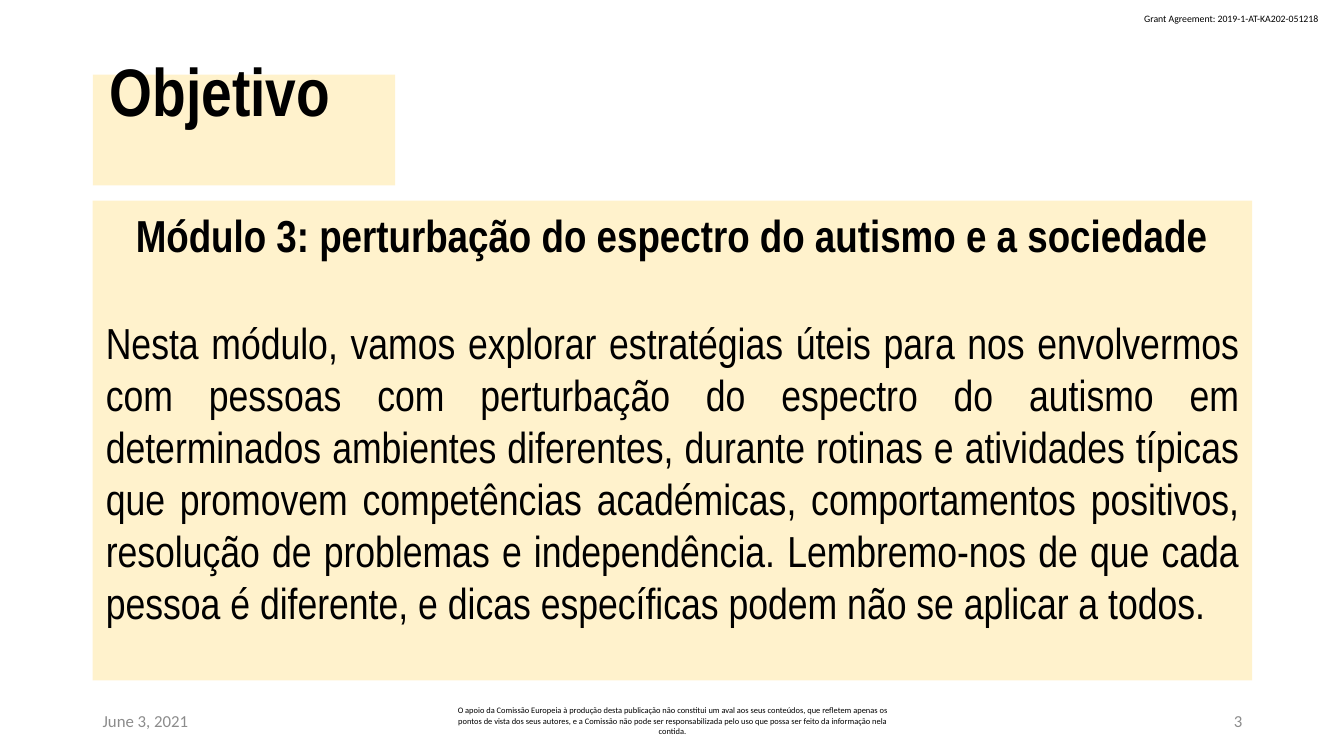
from pptx import Presentation
from pptx.dml.color import RGBColor
from pptx.enum.shapes import MSO_SHAPE
from pptx.enum.text import MSO_ANCHOR, MSO_AUTO_SIZE, PP_ALIGN
from pptx.util import Inches, Pt

COLORS = {"cream": "FFF2CC", "black": "000000", "gray": "8C8C8C"}
HEADING_FONT, SMALL_FONT = "Arial Narrow", "Calibri"
MARGIN = 0.92

GRANT = "Grant Agreement: 2019-1-AT-KA202-051218"
MODULE = "Módulo 3: perturbação do espectro do autismo e a sociedade"
GOAL = (
    "Nesta módulo, vamos explorar estratégias úteis para nos envolvermos com "
    "pessoas com perturbação do espectro do autismo em determinados ambientes "
    "diferentes, durante rotinas e atividades típicas que promovem competências "
    "académicas, comportamentos positivos, resolução de problemas e "
    "independência. Lembremo-nos de que cada pessoa é diferente, e dicas "
    "específicas podem não se aplicar a todos."
)
DISCLAIMER = (
    "O apoio da Comissão Europeia à produção desta publicação não constitui um "
    "aval aos seus conteúdos, que refletem apenas os pontos de vista dos seus "
    "autores, e a Comissão não pode ser responsabilizada pelo uso que possa ser "
    "feito da informação nela contida."
)


def rgb(name):
    return RGBColor.from_string(COLORS[name])


def fill_cream(sp):
    sp.fill.solid()
    sp.fill.fore_color.rgb = rgb("cream")
    sp.line.fill.background()


def set_frame(tf, anchor, left, top, right, bottom):
    tf.word_wrap = True
    tf.auto_size = MSO_AUTO_SIZE.NONE
    tf.vertical_anchor = anchor
    tf.margin_left, tf.margin_top = Inches(left), Inches(top)
    tf.margin_right, tf.margin_bottom = Inches(right), Inches(bottom)


def write(p, text, size, font, color="black", bold=False, align=PP_ALIGN.LEFT):
    p.alignment = align
    p.line_spacing = 1.0
    r = p.add_run()
    r.text = text
    r.font.size = Pt(size)
    r.font.name = font
    r.font.bold = bold
    r.font.color.rgb = rgb(color)


def add_title(s, text):
    sp = s.shapes.title
    sp.left, sp.top = Inches(MARGIN), Inches(0.74)
    sp.width, sp.height = Inches(3), Inches(1.1)
    fill_cream(sp)
    # The deep bottom inset lifts the word to the upper edge of its panel
    set_frame(sp.text_frame, MSO_ANCHOR.MIDDLE, 0.17, 0, 0.13, 0.8)
    write(sp.text_frame.paragraphs[0], text, 48, HEADING_FONT, bold=True)


def add_goal_panel(s):
    sp = s.shapes.add_shape(MSO_SHAPE.RECTANGLE, Inches(MARGIN), Inches(1.99),
                            Inches(11.5), Inches(4.76))
    sp.shadow.inherit = False
    fill_cream(sp)
    tf = sp.text_frame
    set_frame(tf, MSO_ANCHOR.TOP, 0.13, 0.07, 0.13, 0.07)
    write(tf.paragraphs[0], MODULE, 32, HEADING_FONT, bold=True,
          align=PP_ALIGN.CENTER)
    p = tf.add_paragraph()
    p.space_before = Pt(39)
    write(p, GOAL, 31, HEADING_FONT, align=PP_ALIGN.JUSTIFY)


def add_small_text(s, text, left, top, width, height, size, color="black",
                   align=PP_ALIGN.LEFT, anchor=MSO_ANCHOR.MIDDLE):
    sp = s.shapes.add_textbox(Inches(left), Inches(top), Inches(width),
                              Inches(height))
    set_frame(sp.text_frame, anchor, 0.1, 0.05, 0.1, 0.05)
    write(sp.text_frame.paragraphs[0], text, size, SMALL_FONT, color,
          align=align)
    return sp


def main():
    prs = Presentation()
    prs.slide_width, prs.slide_height = Inches(13.33), Inches(7.5)
    s = prs.slides.add_slide(prs.slide_layouts[5])

    # Header
    grant = add_small_text(s, GRANT, 11.25, 0.08, 1.97, 0.22, 7,
                           anchor=MSO_ANCHOR.TOP)
    grant.text_frame.word_wrap = False

    # Title and content
    add_title(s, "Objetivo")
    add_goal_panel(s)

    # Footer: date, disclaimer, slide number
    footer = [
        ("June 3, 2021", MARGIN, 3, 12, "gray", PP_ALIGN.LEFT),
        (DISCLAIMER, 4.42, 4.5, 6, "black", PP_ALIGN.CENTER),
        ("3", 9.42, 3, 12, "gray", PP_ALIGN.RIGHT),
    ]
    for text, left, width, size, color, align in footer:
        add_small_text(s, text, left, 6.95, width, 0.4, size, color, align)

    prs.save("out.pptx")


if __name__ == "__main__":
    main()
